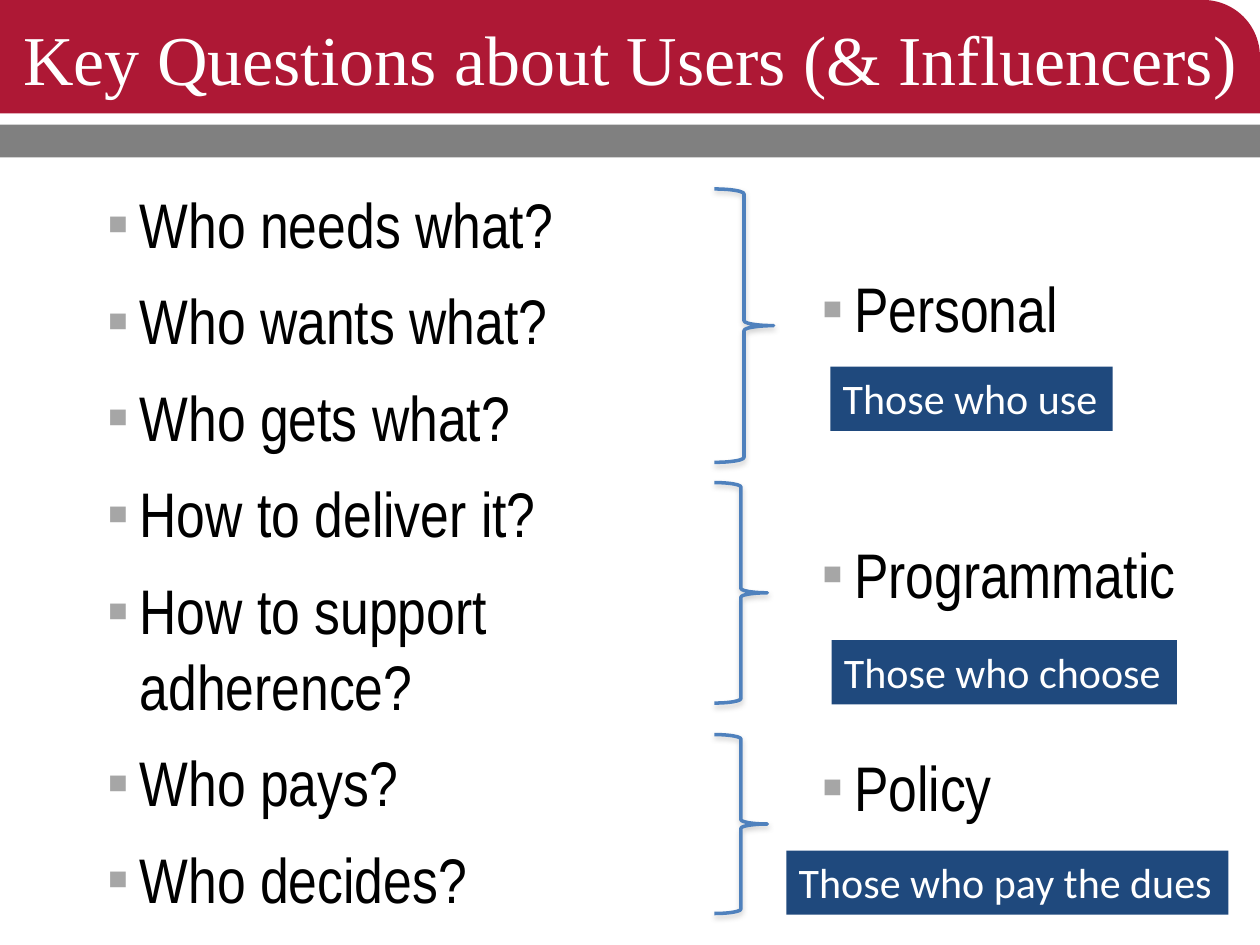
import dataclasses

import lxml.etree
import pptx
import pptx.dml.color
import pptx.enum.shapes
import pptx.enum.text
import pptx.oxml.ns
import pptx.util

SHAPE = pptx.enum.shapes.MSO_SHAPE
ALIGN = pptx.enum.text.PP_ALIGN
ANCHOR = pptx.enum.text.MSO_ANCHOR
FIT = pptx.enum.text.MSO_AUTO_SIZE
SCALE = 9144


@dataclasses.dataclass(frozen=True)
class Theme:
    crimson: str = "AE1835"
    band: str = "808080"
    navy: str = "1F497D"
    brace: str = "4F81BD"
    bullet: str = "A6A6A6"
    white: str = "FFFFFF"
    black: str = "000000"
    title_font: str = "Times New Roman"
    list_font: str = "Arial Narrow"
    label_font: str = "Calibri"
    title_size: int = 40
    list_size: int = 36
    label_size: int = 24


def px(n):
    return pptx.util.Emu(n * SCALE)


def rgb(value):
    return pptx.dml.color.RGBColor.from_string(value)


def sub(parent, tag, **attrs):
    node = lxml.etree.SubElement(parent, pptx.oxml.ns.qn(tag))
    for key, value in attrs.items():
        node.set(key, str(value))
    return node


def write(p, text, font, size, color, align=ALIGN.LEFT, before=0, after=0):
    p.alignment = align
    p.space_before = pptx.util.Pt(before)
    p.space_after = pptx.util.Pt(after)
    r = p.add_run()
    r.text = text
    r.font.name = font
    r.font.size = pptx.util.Pt(size)
    r.font.color.rgb = rgb(color)


class Deck:
    def __init__(self, theme):
        self.theme = theme
        self.prs = pptx.Presentation()
        self.prs.slide_width, self.prs.slide_height = px(1000), px(750)
        self.s = self.prs.slides.add_slide(self.prs.slide_layouts[6])

    def shape(self, kind, box):
        sp = self.s.shapes.add_shape(kind, *map(px, box))
        sp.shadow.inherit = False
        return sp

    def bar(self, kind, box, color):
        sp = self.shape(kind, box)
        sp.fill.solid()
        sp.fill.fore_color.rgb = rgb(color)
        sp.line.fill.background()
        return sp

    def text_box(self, box, wrap=True):
        sp = self.s.shapes.add_textbox(*map(px, box))
        sp.text_frame.word_wrap = wrap
        return sp

    def title(self, box, text):
        t = self.theme
        tf = self.text_box(box).text_frame
        tf.vertical_anchor = ANCHOR.MIDDLE
        write(tf.paragraphs[0], text, t.title_font, t.title_size, t.white, align=ALIGN.CENTER)

    def bullets(self, box, items, top=5, after=0):
        t = self.theme
        tf = self.text_box(box).text_frame
        tf.margin_top = px(top)
        for i, (text, before) in enumerate(items):
            p = tf.add_paragraph() if i else tf.paragraphs[0]
            write(p, text, t.list_font, t.list_size, t.black, before=before, after=after)
            pPr = p._p.get_or_add_pPr()
            pPr.set("marL", str(px(26)))
            pPr.set("indent", str(-px(26)))
            sub(sub(pPr, "a:buClr"), "a:srgbClr", val=t.bullet)
            sub(pPr, "a:buFont", typeface="Arial")
            sub(pPr, "a:buChar", char="▪")

    def brace(self, box):
        sp = self.shape(SHAPE.RIGHT_BRACE, box)
        sp.fill.background()
        sp.line.color.rgb = rgb(self.theme.brace)
        sp.line.width = pptx.util.Pt(2)
        effects = sp._element.spPr.find(pptx.oxml.ns.qn("a:effectLst"))
        shadow = sub(effects, "a:outerShdw", blurRad=40000, dist=20000, dir=5400000, rotWithShape=0)
        sub(sub(shadow, "a:srgbClr", val=self.theme.band), "a:alpha", val=38000)

    def label(self, box, text):
        t = self.theme
        sp = self.text_box(box, wrap=False)
        sp.fill.solid()
        sp.fill.fore_color.rgb = rgb(t.navy)
        sp.text_frame.auto_size = FIT.SHAPE_TO_FIT_TEXT
        write(sp.text_frame.paragraphs[0], text, t.label_font, t.label_size, t.white)


def main():
    theme = Theme()
    deck = Deck(theme)
    deck.bar(SHAPE.RECTANGLE, (0, 99, 1000, 26), theme.band)
    header = deck.bar(SHAPE.ROUND_1_RECTANGLE, (0, 0, 1000, 90), theme.crimson)
    header.adjustments[0] = 0.5
    deck.title((0, -17, 1000, 125), "Key Questions about Users (& Influencers)")

    questions = [
        "Who needs what?",
        "Who wants what?",
        "Who gets what?",
        "How to deliver it?",
        "How to support adherence?",
        "Who pays?",
        "Who decides?",
    ]
    deck.bullets((75, 142, 500, 550), [(q, 0) for q in questions], after=12)
    levels = [("Personal", 0), ("Programmatic", 108.5), ("Policy", 78.5)]
    deck.bullets((642, 133, 325, 550), levels, top=81)

    for top, width, height in [(150, 47, 217), (383, 42, 175), (583, 42, 142)]:
        deck.brace((567, top, width, height))

    for box, text in [
        ((624, 675, 351, 51), "Those who pay the dues"),
        ((660, 508, 274, 51), "Those who choose"),
        ((659, 291, 224, 51), "Those who use"),
    ]:
        deck.label(box, text)
    deck.prs.save("out.pptx")


if __name__ == "__main__":
    main()
